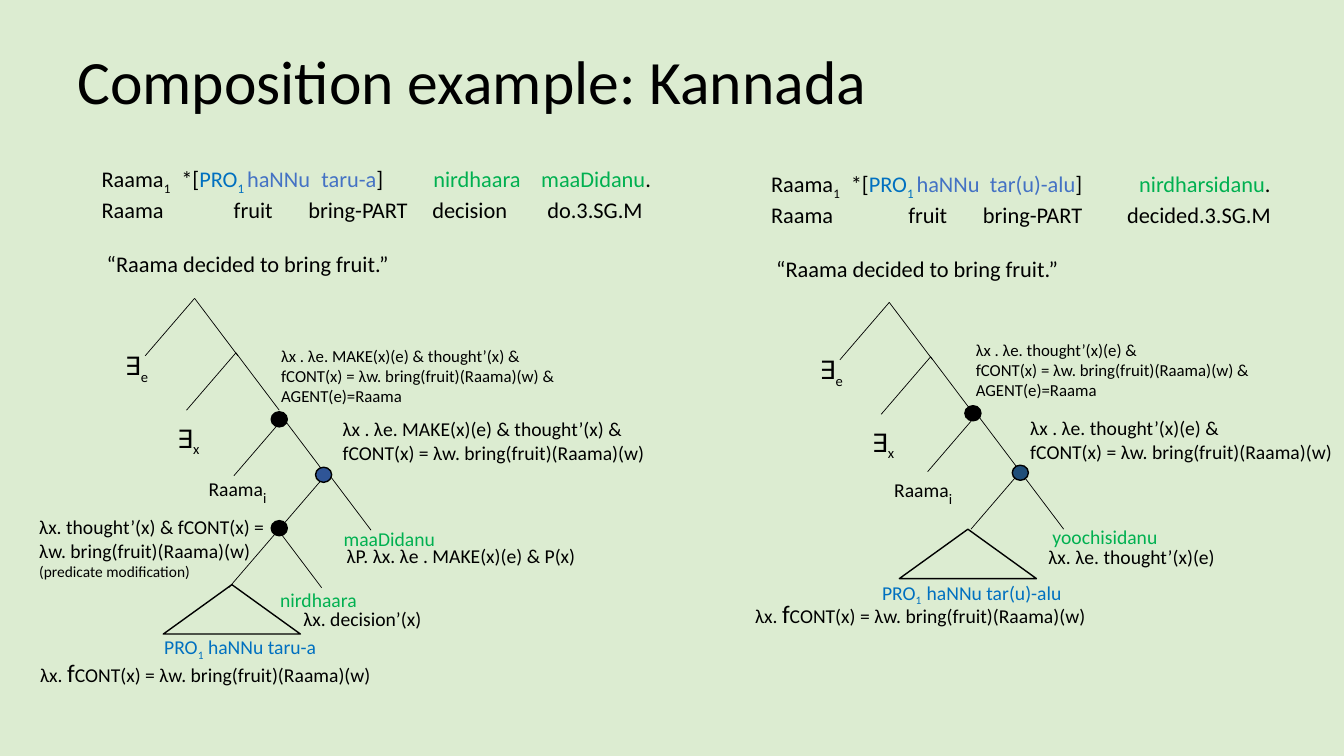
from lxml import etree
from pptx import Presentation
from pptx.dml.color import RGBColor
from pptx.enum import shapes, text
from pptx.oxml import ns
from pptx.util import Inches, Pt

COLOURS = {"page": "DCECD1", "ink": "000000", "pro": "0070C0", "clause": "4472C4",
           "verb": "00B050", "left node": "2F5597", "right node": "1F4E79"}
FORK_LEFT, FORK_RIGHT, FORK_DROP = 0.49, 0.43, 0.57
DOT_WIDTH, DOT_HEIGHT = 0.16, 0.15
TRIANGLE_WIDTH, TRIANGLE_HEIGHT = 1.36, 0.49

BRING = "CONT(x) = λw. bring(fruit)(Raama)(w)"
CLAUSE_MEANING = [["λx. ", ("f", {"size": 18}), BRING]]
SUBJECT = [["Raama", ("i", {"size": 18, "sub": True})]]


def colour(name):
    """Return the named colour."""
    return RGBColor.from_string(COLOURS[name])


def add_span(para, content, size, ink="ink", sub=False):
    """Add one run of text, lowered if it is a subscript."""
    span = para.add_run()
    span.text = content
    span.font.name = "Calibri"
    span.font.size = Pt(size)
    span.font.color.rgb = colour(ink)
    if sub:
        span.font._element.set("baseline", "-25000")


def add_label(page, box, lines, size=14, ink="ink"):
    """Write lines of spans in a box and return its text frame."""
    frame = page.shapes.add_textbox(*map(Inches, box)).text_frame
    frame.word_wrap = True
    frame.margin_right = 0
    for index, line in enumerate(lines):
        para = frame.add_paragraph() if index else frame.paragraphs[0]
        for part in line:
            content, style = (part, {}) if isinstance(part, str) else part
            add_span(para, content, **{"size": size, "ink": ink, **style})
    return frame


def set_tabs(para, stops):
    """Give a paragraph left tab stops in inches."""
    tabs = etree.SubElement(para._p.get_or_add_pPr(), ns.qn("a:tabLst"))
    for stop in stops:
        etree.SubElement(tabs, ns.qn("a:tab"), pos=str(Inches(stop)), algn="l")


def add_title(page, box, words):
    """Write the slide title, centred on the height of its box."""
    frame = add_label(page, box, [[words]], 44)
    frame.vertical_anchor = text.MSO_ANCHOR.MIDDLE
    frame.paragraphs[0].line_spacing = 0.9


def add_sentence(page, box, clause, verb, gloss, word_stops, gloss_stops):
    """Write a glossed sentence aligned on tab stops, with its translation."""
    sub = {"sub": True}
    words = ["Raama", ("1", sub), "\t*[", ("PRO", {"ink": "pro"}),
             ("1 ", {"ink": "pro", **sub}), (clause, {"ink": "clause"}),
             "]\t", (verb, {"ink": "verb"}), "."]
    frame = add_label(page, box, [words, [gloss], ["“Raama decided to bring fruit.”"]], 16)
    first, second, translation = frame.paragraphs
    set_tabs(first, word_stops)
    set_tabs(second, gloss_stops)
    translation.space_before = Pt(19.5)
    translation._p.get_or_add_pPr().set("marL", str(Inches(0.05)))


def add_branch(page, start, end):
    """Draw one thin branch."""
    branch = page.shapes.add_connector(
        shapes.MSO_CONNECTOR.STRAIGHT, *map(Inches, (*start, *end)))
    branch.line.color.rgb = colour("ink")
    branch.line.width = Pt(0.5)
    etree.SubElement(branch._element.spPr, ns.qn("a:effectLst"))


def add_outline(page, kind, box, fill=None):
    """Draw a black outlined shape, filled if a colour is named."""
    shape = page.shapes.add_shape(kind, *map(Inches, box))
    shape.shadow.inherit = False
    shape.line.color.rgb = colour("ink")
    shape.line.width = Pt(1)
    if fill:
        shape.fill.solid()
        shape.fill.fore_color.rgb = colour(fill)
    else:
        shape.fill.background()


def add_tree(page, apex, forks, triangle, dots, labels):
    """Draw a syntax tree whose parts are placed relative to its apex."""
    left, top = apex
    for x, y in forks:
        start = (left + x, top + y)
        for reach in (-FORK_LEFT, FORK_RIGHT):
            add_branch(page, start, (start[0] + reach, start[1] + FORK_DROP))
    x, y = triangle
    add_outline(page, shapes.MSO_SHAPE.ISOSCELES_TRIANGLE,
                (left + x - TRIANGLE_WIDTH / 2, top + y, TRIANGLE_WIDTH, TRIANGLE_HEIGHT))
    quantifiers = [(-0.79, 0.47, 0.71, 0.4, "e"), (-0.27, 1.19, 1.63, 0.4, "x")]
    for x, y, width, height, variable in quantifiers:
        add_label(page, (left + x, top + y, width, height),
                  [["∃", (variable, {"sub": True})]], 18)
    for (x, y, width, height), lines, *style in labels:
        add_label(page, (left + x, top + y, width, height), lines, *style)
    for x, y, fill in dots:
        add_outline(page, shapes.MSO_SHAPE.OVAL,
                    (left + x - DOT_WIDTH / 2, top + y - DOT_HEIGHT / 2,
                     DOT_WIDTH, DOT_HEIGHT), fill)


def add_complex_verb(page):
    """Build the left half, with noun and light verb."""
    add_sentence(page, (0.91, 1.59, 6.01, 1.18), "haNNu\ttaru-a", "nirdhaara\tmaaDidanu",
                 "Raama\tfruit\tbring-PART\tdecision\tdo.3.SG.M",
                 (0.79, 2.18, 3.29, 4.36), (1.31, 2.05, 3.28, 4.42))
    add_tree(
        page, (1.93, 2.96),
        forks=[(0, 0), (0.41, 0.54), (0.88, 1.19), (1.32, 1.73), (0.83, 2.3)],
        triangle=(0.37, 2.84),
        dots=[(0.84, 1.2, "ink"), (1.28, 1.75, "left node"), (0.84, 2.28, "ink")],
        labels=[
            ((0.76, 0.42, 3.36, 0.71),
             [["λx . λe. MAKE(x)(e) & thought’(x) &"], ["f" + BRING + " &"],
              ["AGENT(e)=Raama"]], 12),
            ((1.37, 1.13, 3.36, 0.88),
             [["λx . λe. MAKE(x)(e) & thought’(x) &"], ["f" + BRING]]),
            ((0.04, 1.67, 1.63, 0.4), SUBJECT),
            ((-1.64, 2.1, 3.25, 0.77),
             [["λx. thought’(x) & fCONT(x) ="], ["λw. bring(fruit)(Raama)(w)"],
              [("(predicate modification)", {"size": 11})]]),
            ((1.38, 2.22, 1.84, 0.34), [["maaDidanu"]], 14, "verb"),
            ((1.41, 2.39, 3.74, 0.34), [["λP. λx. λe . MAKE(x)(e) & P(x)"]]),
            ((0.75, 2.82, 1.84, 0.34), [["nirdhaara"]], 14, "verb"),
            ((0.98, 3.01, 3.74, 0.34), [["λx. decision’(x)"]]),
            ((-0.4, 3.29, 1.84, 0.34),
             [["PRO", ("1", {"sub": True}), " haNNu taru-a"]], 14, "pro"),
            ((-1.63, 3.51, 3.74, 0.4), CLAUSE_MEANING),
        ])


def add_simple_verb(page):
    """Build the right half, with a single verb."""
    add_sentence(page, (7.55, 1.64, 5.69, 1.18), "haNNu\ttar(u)-alu", "nirdharsidanu",
                 "Raama\tfruit\tbring-PART\tdecided.3.SG.M",
                 (0.79, 2.17, 3.65), (1.36, 2.1, 3.53))
    add_tree(
        page, (8.82, 3),
        forks=[(0, 0), (0.41, 0.54), (0.87, 1.11), (1.3, 1.68)],
        triangle=(0.78, 2.25),
        dots=[(0.83, 1.1, "ink"), (1.3, 1.69, "right node")],
        labels=[
            ((0.76, 0.32, 3.36, 0.71),
             [["λx . λe. thought’(x)(e) &"], ["f" + BRING + " &"], ["AGENT(e)=Raama"]], 12),
            ((1.3, 1.08, 3.2, 0.88), [["λx . λe. thought’(x)(e) &"], ["f" + BRING]]),
            ((-0.05, 1.64, 1.63, 0.4), SUBJECT),
            ((1.52, 2.16, 1.34, 0.34), [["yoochisidanu"]], 14, "verb"),
            ((1.48, 2.36, 3, 0.34), [["λx. λe. thought’(x)(e)"]]),
            ((-0.17, 2.71, 2.16, 0.34),
             [["PRO", ("1  ", {"sub": True}), "haNNu tar(u)-alu"]], 14, "pro"),
            ((-1.43, 2.89, 3.74, 0.4), CLAUSE_MEANING),
        ])


def main():
    """Build the slide and save it."""
    deck = Presentation()
    deck.slide_width, deck.slide_height = Inches(13.33), Inches(7.5)
    page = deck.slides.add_slide(deck.slide_layouts[6])
    page.background.fill.solid()
    page.background.fill.fore_color.rgb = colour("page")
    add_title(page, (0.67, 0.11, 11.5, 1.45), "Composition example: Kannada")
    add_complex_verb(page)
    add_simple_verb(page)
    deck.save("out.pptx")


if __name__ == "__main__":
    main()
